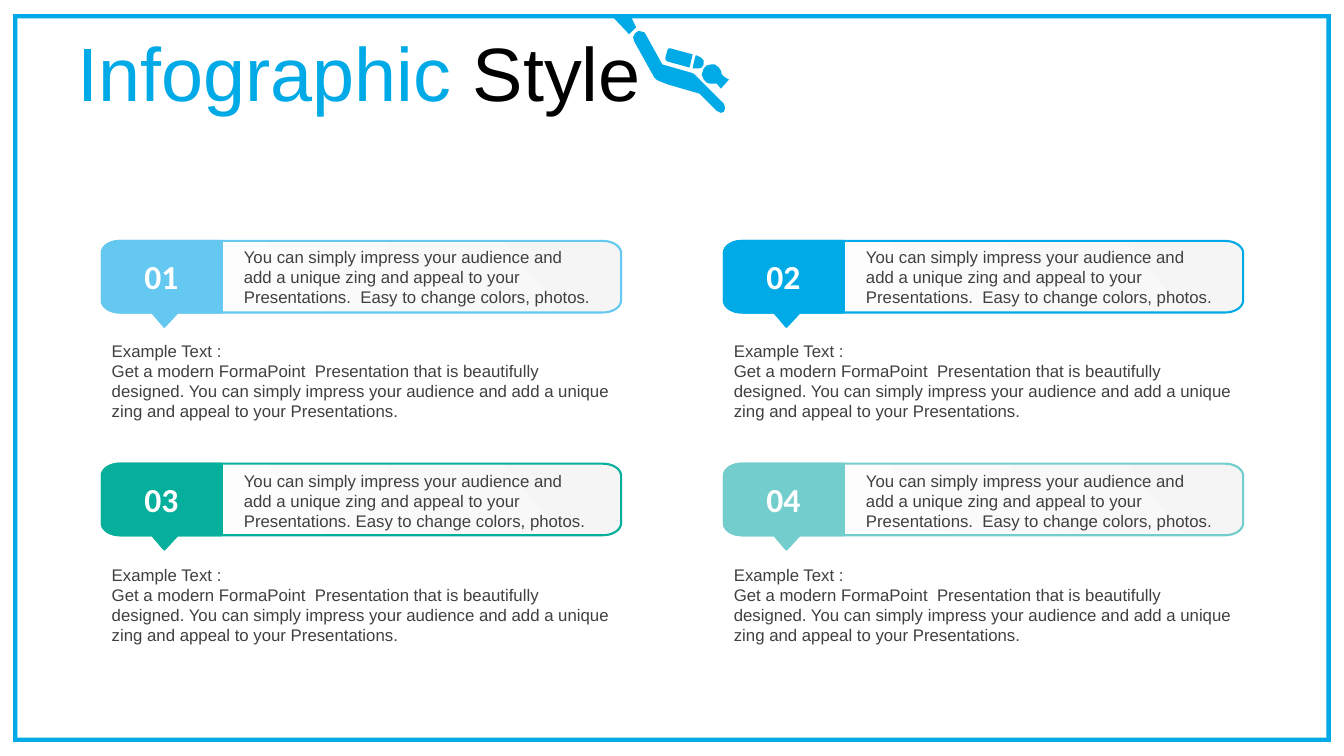
"""Builds the Infographic Style slide with four numbered callouts."""
from dataclasses import dataclass
from itertools import product
from math import cos, radians, sin

from pptx import Presentation
from pptx.dml.color import RGBColor
from pptx.enum.shapes import MSO_SHAPE as Preset
from pptx.enum.text import MSO_ANCHOR as Anchor, MSO_AUTO_SIZE as AutoSize, PP_ALIGN as Align
from pptx.shapes.autoshape import Shape
from pptx.slide import Slide
from pptx.text.text import TextFrame, _Paragraph as Paragraph
from pptx.util import Emu, Pt

EMU_PER_PX = 9144
BLUE = RGBColor(0x00, 0xAA, 0xE6)
SKY = RGBColor(0x64, 0xC8, 0xF0)
GREEN = RGBColor(0x05, 0xAF, 0x9B)
AQUA = RGBColor(0x73, 0xCD, 0xCD)
PALE = RGBColor(0xF5, 0xF5, 0xF5)
WHITE = RGBColor(0xFF, 0xFF, 0xFF)
BLACK = RGBColor(0x00, 0x00, 0x00)
GREY = RGBColor(0x40, 0x40, 0x40)

Point = tuple[float, float]
Contour = list[Point]

CARD_WIDTH, TAB_WIDTH, BAR_HEIGHT = 515, 119, 71
CORNER_X, CORNER_Y = 18, 12
LEFT, COLUMN_PITCH = 101, 617
BAR_TOP, BAR_PITCH = 239, 221
TEXT_TOP, TEXT_PITCH = 240, 222
INTRO = "You can simply impress your audience and add a unique zing and appeal to your Presentations."
OFFER = "Easy to change colors, photos."
DETAILS = (
    "Example Text :",
    "Get a modern FormaPoint  Presentation that is beautifully designed. "
    "You can simply impress your audience and add a unique zing and appeal to your Presentations.",
)

HEAD: Contour = [
    (705, 64), (709, 64), (713, 67), (715, 70), (716, 74), (718, 76), (723, 79), (715, 88),
    (711, 83), (708, 83), (704, 83), (701, 82), (698, 79), (696, 74), (698, 68), (701, 65),
]
TANK_CAP: Contour = [
    (691, 55), (695, 57), (698, 60), (698, 64), (696, 67), (693, 68), (687, 68), (688, 63), (690, 55),
]
TANK: Contour = [
    (665, 48), (687, 54), (684, 67), (680, 66), (662, 61), (660, 59), (660, 57), (662, 50), (663, 48),
]
BODY: Contour = [
    (635, 31), (639, 32), (641, 35), (647, 46), (657, 64), (685, 72), (688, 73), (691, 76),
    (718, 103), (719, 106), (719, 108), (718, 111), (715, 112), (711, 110), (704, 103), (694, 93),
    (663, 84), (655, 81), (651, 79), (649, 77), (629, 41), (628, 37), (630, 33), (633, 31),
]
FLIPPER: Contour = [(606, 15), (625, 15), (631, 27), (624, 34)]


@dataclass(frozen=True)
class Card:
    number: str
    color: RGBColor
    summary: str


@dataclass(frozen=True)
class Box:
    left: int
    top: int
    width: int
    height: int

    def emu(self) -> tuple[Emu, Emu, Emu, Emu]:
        return px(self.left), px(self.top), px(self.width), px(self.height)


CARDS = (
    Card("01", SKY, f"{INTRO}  {OFFER}"),
    Card("02", BLUE, f"{INTRO}  {OFFER}"),
    Card("03", GREEN, f"{INTRO} {OFFER}"),
    Card("04", AQUA, f"{INTRO}  {OFFER}"),
)


def px(length: float) -> Emu:
    return Emu(round(length * EMU_PER_PX))


def add_run(paragraph: Paragraph, words: str, size: int, color: RGBColor,
            face: str = "Arial", bold: bool = False) -> None:
    run = paragraph.add_run()
    run.text = words
    run.font.name, run.font.size, run.font.bold = face, Pt(size), bold
    run.font.color.rgb = color


def add_textbox(slide: Slide, box: Box) -> TextFrame:
    frame = slide.shapes.add_textbox(*box.emu()).text_frame
    frame.word_wrap = True
    frame.auto_size = AutoSize.SHAPE_TO_FIT_TEXT
    return frame


def add_outline(slide: Slide, contours: list[Contour]) -> Shape:
    scaled = [[(px(x), px(y)) for x, y in contour] for contour in contours]
    builder = slide.shapes.build_freeform(*scaled[0][0])
    for index, contour in enumerate(scaled):
        if index:
            builder.move_to(*contour[0])
        builder.add_line_segments(contour[1:], close=True)
    outline = builder.convert_to_shape()
    outline.shadow.inherit = False
    return outline


def corner(x: int, y: int, start: int) -> Contour:
    angles = [radians(start + step) for step in range(0, 91, 10)]
    return [(x + CORNER_X * cos(a), y + CORNER_Y * sin(a)) for a in angles]


def callout(left: int, top: int, width: int, rounded_right: bool) -> Contour:
    right, bottom = left + width, top + BAR_HEIGHT
    near, far = left + CORNER_X, right - CORNER_X
    high, low = top + CORNER_Y, bottom - CORNER_Y
    end = (corner(far, high, 270) + corner(far, low, 0)) if rounded_right else [(right, top), (right, bottom)]
    pointer = [(left + 75, bottom), (left + 62, bottom + 14), (left + 50, bottom)]
    return end + pointer + corner(near, low, 90) + corner(near, high, 180)


def add_card(slide: Slide, card: Card, left: int, bar_top: int, text_top: int) -> None:
    bar = add_outline(slide, [callout(left, bar_top, CARD_WIDTH, True)])
    bar.fill.gradient()
    bar.fill.gradient_angle = 220
    for stop, color, position in zip(bar.fill.gradient_stops, (PALE, WHITE), (0, 1)):
        stop.color.rgb = color
        stop.position = position
    tab = add_outline(slide, [callout(left, bar_top, TAB_WIDTH, False)])
    tab.fill.solid()
    tab.fill.fore_color.rgb = card.color
    for part in (bar, tab):
        part.line.color.rgb = card.color
        part.line.width = Pt(1.5)

    number = add_textbox(slide, Box(left + 20, bar_top + 10, 78, 50)).paragraphs[0]
    number.alignment = Align.CENTER
    add_run(number, card.number, 24, WHITE, "Calibri", True)
    summary = add_textbox(slide, Box(left + 131, text_top, 368, BAR_HEIGHT))
    add_run(summary.paragraphs[0], card.summary, 12, GREY)
    details = add_textbox(slide, Box(left, text_top + 93, CARD_WIDTH, 91))
    add_run(details.paragraphs[0], DETAILS[0], 12, GREY)
    add_run(details.add_paragraph(), DETAILS[1], 12, GREY)


def add_title(slide: Slide) -> None:
    title = slide.shapes.title
    title.left, title.top, title.width, title.height = Box(67, 37, 1224, 79).emu()
    frame = title.text_frame
    frame.auto_size = AutoSize.NONE
    frame.word_wrap = True
    frame.vertical_anchor = Anchor.MIDDLE
    heading = frame.paragraphs[0]
    heading.alignment = Align.LEFT
    heading.line_spacing = 0.9
    add_run(heading, "Infographic", 54, BLUE)
    add_run(heading, " Style", 54, BLACK)


def main() -> None:
    deck = Presentation()
    deck.slide_width, deck.slide_height = px(1333), px(750)
    slide = deck.slides.add_slide(deck.slide_layouts[5])
    border = slide.shapes.add_shape(Preset.FRAME, *Box(13, 14, 1307, 722).emu())
    border.adjustments[0] = 0.006
    border.shadow.inherit = False
    add_title(slide)
    diver = add_outline(slide, [HEAD, TANK_CAP, TANK, BODY, FLIPPER])
    for part in (border, diver):
        part.fill.solid()
        part.fill.fore_color.rgb = BLUE
        part.line.fill.background()
    for card, (row, column) in zip(CARDS, product(range(2), repeat=2)):
        add_card(slide, card, LEFT + column * COLUMN_PITCH,
                 BAR_TOP + row * BAR_PITCH, TEXT_TOP + row * TEXT_PITCH)
    deck.save("out.pptx")


if __name__ == "__main__":
    main()
